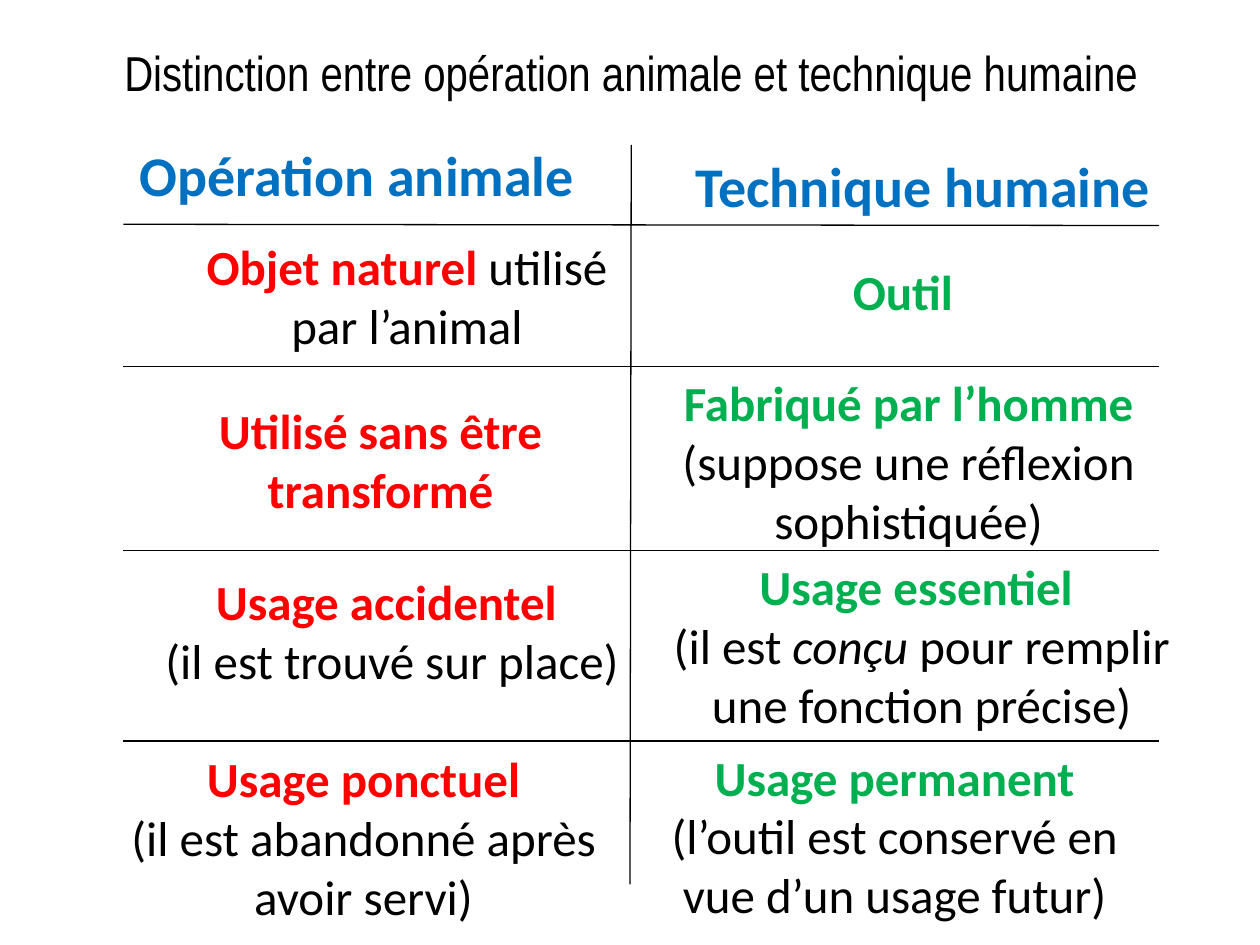
from lxml import etree
from pptx import Presentation
from pptx.dml.color import RGBColor
from pptx.enum.shapes import MSO_CONNECTOR
from pptx.enum.text import MSO_ANCHOR, MSO_AUTO_SIZE, PP_ALIGN
from pptx.oxml.ns import qn
from pptx.util import Inches, Pt

STRAIGHT = MSO_CONNECTOR.STRAIGHT
TOP = MSO_ANCHOR.TOP
FIT_SHAPE = MSO_AUTO_SIZE.SHAPE_TO_FIT_TEXT
CENTER = PP_ALIGN.CENTER

COLORS = {"heading": "0070C0", "animal": "FF0000", "human": "00B050", "body": "000000"}
TITLE = "Distinction entre opération animale et technique humaine"
TITLE_PLACE = (0.45, 0.29, 9.11, 0.57)
LINES = [((5.01, 1.15), (5, 7.02)), ((0.98, 1.78), (9.2, 1.79))]
LINES += [((0.98, y), (9.2, y)) for y in (2.91, 4.37, 5.88)]

# Each cell: place, size, paragraphs of (text, style) spans
CELLS = [
    ((0.67, 1.07, 4.33, 0.64), 32, [[("Opération animale", "heading")]]),
    ((5, 1.15, 4.65, 0.64), 32, [[("Technique humaine", "heading")]]),
    ((1.48, 1.83, 3.5, 1.04), 28,
     [[("Objet naturel", "animal"), (" utilisé par l’animal", "body")]]),
    ((5.57, 2.03, 3.19, 0.57), 28, [[("Outil", "human")]]),
    ((1.54, 3.13, 2.96, 1.04), 28, [[("Utilisé sans être transformé", "animal")]]),
    ((5.05, 2.91, 4.32, 1.51), 28,
     [[("Fabriqué par l’homme", "human")],
      [("(suppose une réflexion sophistiquée)", "body")]]),
    ((1.14, 4.49, 3.94, 1.04), 28,
     [[("Usage accidentel ", "animal")], [("(il est trouvé sur place)", "body")]]),
    ((4.98, 4.37, 4.67, 1.51), 28,
     [[("Usage essentiel ", "human")],
      [("(il est ", "body"), ("conçu ", "italic"),
       ("pour remplir une fonction précise)", "body")]]),
    ((0.71, 5.89, 4.35, 1.51), 28,
     [[("Usage ponctuel", "animal")],
      [("(il est abandonné après avoir servi)", "body")]]),
    ((5, 5.88, 4.2, 1.51), 28,
     [[("Usage permanent", "human")],
      [("(l’outil est conservé en vue d’un usage futur)", "body")]]),
]


def fill_frame(frame, paragraphs, size, font_name):
    frame.word_wrap = True
    frame.auto_size = FIT_SHAPE
    frame.vertical_anchor = TOP
    for index, spans in enumerate(paragraphs):
        para = frame.add_paragraph() if index else frame.paragraphs[0]
        para.alignment = CENTER
        para.font.size = Pt(size)
        para.font.name = font_name
        for text, style in spans:
            span = para.add_run()
            span.text = text
            span.font.bold = style not in ("body", "italic")
            if style == "italic":
                span.font.italic = True
            color = COLORS.get(style, COLORS["body"])
            span.font.color.rgb = RGBColor.from_string(color)


def add_line(page, start, end):
    points = [Inches(value) for value in (*start, *end)]
    line = page.shapes.add_connector(STRAIGHT, *points)
    line.line.width = Pt(0.75)
    line.line.color.rgb = RGBColor.from_string(COLORS["body"])
    etree.SubElement(line._element.spPr, qn("a:effectLst"))


def main():
    deck = Presentation()
    deck.slide_width, deck.slide_height = Inches(10), Inches(7.5)
    page = deck.slides.add_slide(deck.slide_layouts[5])
    for start, end in LINES:
        add_line(page, start, end)
    for place, size, paragraphs in CELLS:
        box = page.shapes.add_textbox(*map(Inches, place))
        fill_frame(box.text_frame, paragraphs, size, "Calibri")
    title = page.shapes.title
    title.left, title.top, title.width, title.height = map(Inches, TITLE_PLACE)
    fill_frame(title.text_frame, [[(TITLE, "body")]], 28, "Arial Narrow")
    deck.save("out.pptx")


if __name__ == "__main__":
    """Build the comparison slide."""
    main()
